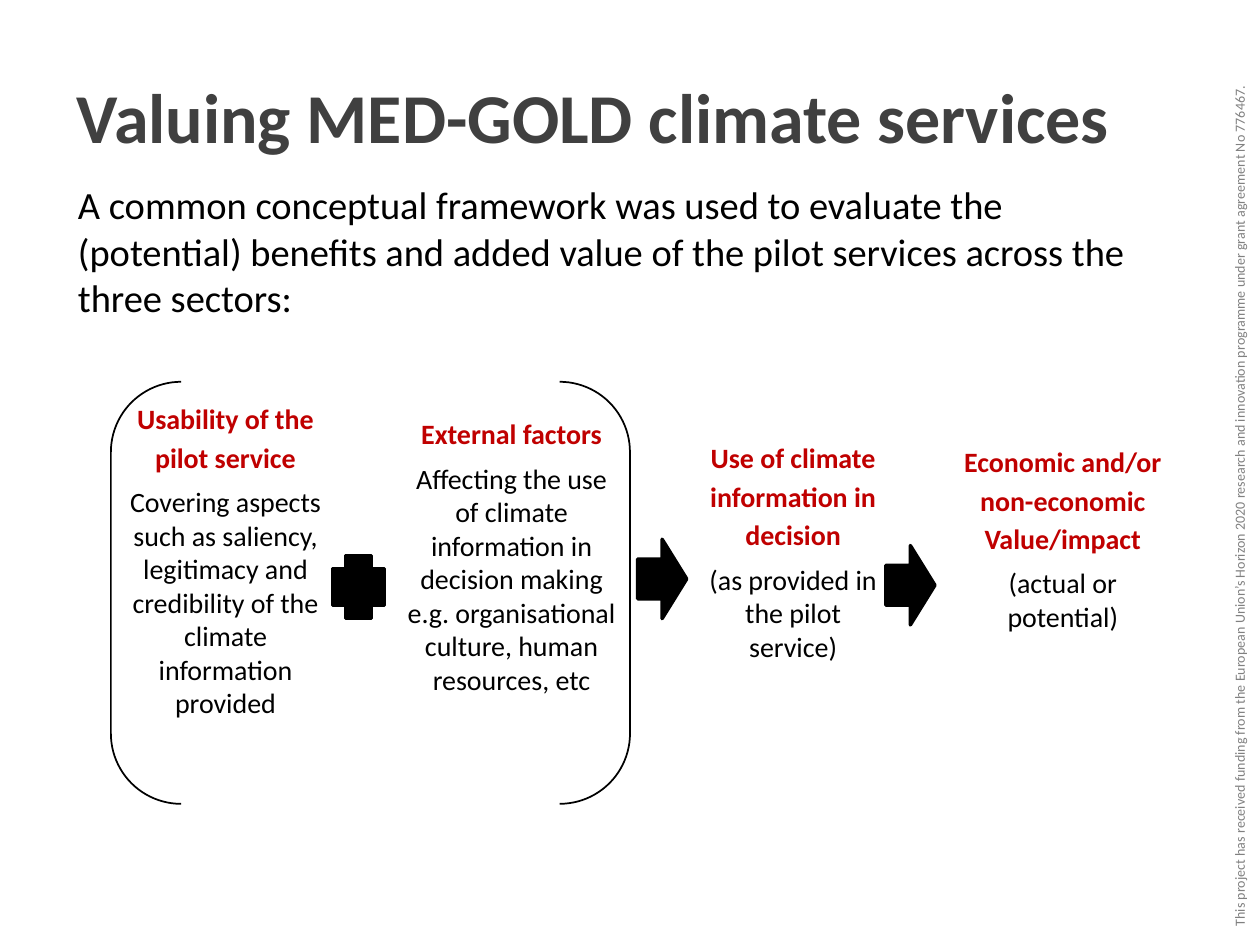
from pptx import Presentation
from pptx.dml.color import RGBColor
from pptx.enum.shapes import MSO_SHAPE
from pptx.enum.text import MSO_ANCHOR, PP_ALIGN
from pptx.util import Inches, Pt


def color(hex_value):
    return RGBColor.from_string(hex_value)


class FrameworkSlide:
    FONT = "Calibri"
    BLACK, WHITE, RED = "000000", "FFFFFF", "C00000"
    DARK_GRAY, GRAY = "404040", "808080"

    def __init__(self, slide):
        self.slide = slide

    def fill_paragraph(self, paragraph, text, size, ink, bold=False, **layout):
        """Add styled text; layout holds paragraph format values."""
        for name, value in layout.items():
            setattr(paragraph, name, value)
        run = paragraph.add_run()
        run.text = text
        font_format = {"name": self.FONT, "size": Pt(size), "bold": bold}
        for name, value in font_format.items():
            setattr(run.font, name, value)
        run.font.color.rgb = color(ink)

    def text(self, bounds, text, size, ink, bold=False,
             anchor=MSO_ANCHOR.TOP, rotation=0, **layout):
        box = self.slide.shapes.add_textbox(*map(Inches, bounds))
        box.rotation = rotation
        box.text_frame.word_wrap = True
        box.text_frame.vertical_anchor = anchor
        self.fill_paragraph(box.text_frame.paragraphs[0], text, size, ink,
                            bold, **layout)

    def shape(self, kind, bounds, fill=None, line=None, line_width=1):
        shape = self.slide.shapes.add_shape(kind, *map(Inches, bounds))
        shape.shadow.inherit = False
        if fill:
            shape.fill.solid()
            shape.fill.fore_color.rgb = color(fill)
        else:
            shape.fill.background()
        if line:
            shape.line.color.rgb = color(line)
            shape.line.width = Pt(line_width)
        else:
            shape.line.fill.background()
        return shape

    def stage(self, bounds, heading, detail):
        """A white panel with a red heading above its explanation."""
        frame = self.shape(MSO_SHAPE.RECTANGLE, bounds, self.WHITE).text_frame
        frame.word_wrap = True
        frame.vertical_anchor = MSO_ANCHOR.TOP
        self.fill_paragraph(frame.paragraphs[0], heading, 16, self.RED,
                            bold=True, alignment=PP_ALIGN.CENTER,
                            line_spacing=1.15)
        self.fill_paragraph(frame.add_paragraph(), detail, 16, self.BLACK,
                            alignment=PP_ALIGN.CENTER, space_before=Pt(6))

    def symbol(self, kind, bounds):
        self.shape(kind, bounds, self.BLACK, self.BLACK, 2)


STAGES = [
    ((0.82, 3.1, 1.94, 3.28), "Usability of the pilot service",
     "Covering aspects such as saliency, legitimacy and credibility of the "
     "climate information provided"),
    ((3.12, 3.22, 1.88, 3.28), "External factors",
     "Affecting the use of climate information in decision making "
     "e.g. organisational culture, human resources, etc"),
    ((5.51, 3.41, 1.57, 2.54), "Use of climate information in decision",
     "(as provided in the pilot service)"),
    ((7.51, 3.44, 1.85, 2.52), "Economic and/or non-economic Value/impact",
     "(actual or potential)"),
]

SYMBOLS = [
    (MSO_SHAPE.CROSS, (2.64, 4.41, 0.41, 0.5)),
    (MSO_SHAPE.RIGHT_ARROW, (5.06, 4.28, 0.39, 0.63)),
    (MSO_SHAPE.RIGHT_ARROW, (7.03, 4.33, 0.39, 0.63)),
]


def main():
    deck = Presentation()
    deck.slide_width, deck.slide_height = Inches(10), Inches(7.5)
    page = FrameworkSlide(deck.slides.add_slide(deck.slide_layouts[6]))

    page.text((5.39, 2.88, 8.9, 0.24),
              "This project has received funding from the European Union’s "
              "Horizon 2020 research and innovation programme under grant "
              "agreement No 776467.",
              8, page.GRAY, rotation=270, alignment=PP_ALIGN.JUSTIFY)
    page.text((0.51, 0.29, 8.75, 1.25), "Valuing MED-GOLD climate services",
              40, page.DARK_GRAY, bold=True, anchor=MSO_ANCHOR.MIDDLE)
    for bounds, heading, detail in STAGES:
        page.stage(bounds, heading, detail)
    for kind, bounds in SYMBOLS:
        page.symbol(kind, bounds)
    page.shape(MSO_SHAPE.DOUBLE_BRACKET, (0.88, 3.03, 4.12, 3.35),
               line=page.BLACK)
    page.text((0.52, 1.39, 8.75, 1.21),
              "A common conceptual framework was used to evaluate the "
              "(potential) benefits and added value of the pilot services "
              "across the three sectors:", 22, page.BLACK)

    deck.save("out.pptx")


if __name__ == "__main__":
    main()
